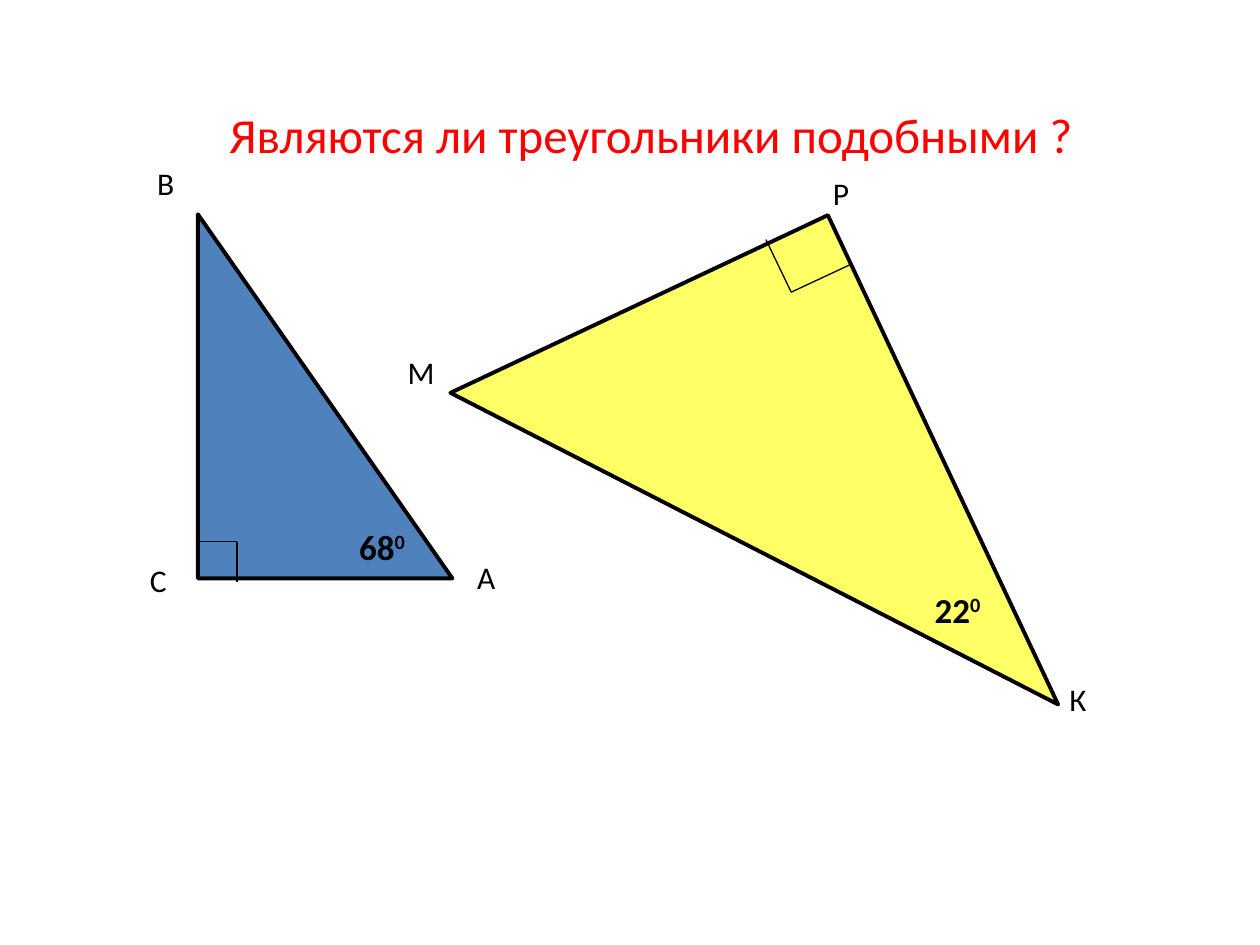
from lxml import etree
from pptx import Presentation
from pptx import util as u
from pptx.dml.color import RGBColor
from pptx.enum import shapes, text
from pptx.oxml.ns import qn


def rgb(value):
    return RGBColor.from_string(value)


class Board:
    """Style and current slide; lengths are in centimetres."""
    FONT = "Calibri"
    INK = "000000"

    def __init__(self, prs):
        self.s = prs.slides.add_slide(prs.slide_layouts[5])

    def place(self, sp, x, y, w, h):
        sp.left, sp.top, sp.width, sp.height = map(u.Cm, (x, y, w, h))

    def set_text(self, sp, words, size, color=INK, bold=False):
        tf = sp.text_frame
        tf.word_wrap = False
        tf.auto_size = text.MSO_AUTO_SIZE.SHAPE_TO_FIT_TEXT
        tf.vertical_anchor = text.MSO_ANCHOR.TOP
        p = tf.paragraphs[0]
        p.alignment = text.PP_ALIGN.LEFT
        p.add_run().text = words
        p.font.name, p.font.size, p.font.bold = self.FONT, u.Pt(size), bold
        p.font.color.rgb = rgb(color)
        return p

    def title(self, words, x, y, w, h):
        sp = self.s.shapes.title
        self.place(sp, x, y, w, h)
        self.set_text(sp, words, 28, "FF0000")

    def label(self, words, x, y, w=0.94, h=1.02, size=18, bold=False):
        sp = self.s.shapes.add_textbox(*map(u.Cm, (x, y, w, h)))
        return self.set_text(sp, words, size, bold=bold)

    def angle(self, degrees, x, y, w):
        p = self.label(degrees, x, y, w, 1.1, 20, True)
        r = p.add_run()
        r.text = "0"
        r._r.get_or_add_rPr().set("baseline", "30000")

    def triangle(self, x, y, w, h, fill, rotation=0):
        sp = self.s.shapes.add_shape(
            shapes.MSO_SHAPE.RIGHT_TRIANGLE, *map(u.Cm, (x, y, w, h)))
        sp.rotation = rotation
        sp.shadow.inherit = False
        sp.fill.solid()
        sp.fill.fore_color.rgb = rgb(fill)
        sp.line.color.rgb = rgb(self.INK)
        sp.line.width = u.Pt(2.25)

    def right_angle(self, *points):
        for start, end in zip(points, points[1:]):
            line = self.s.shapes.add_connector(
                shapes.MSO_CONNECTOR.STRAIGHT, *map(u.Cm, start + end))
            line.line.color.rgb = rgb(self.INK)
            line.line.width = u.Pt(0.75)
            etree.SubElement(line._element.spPr, qn("a:effectLst"))


def main():
    prs = Presentation()
    prs.slide_width, prs.slide_height = u.Cm(25.4), u.Cm(19.05)
    board = Board(prs)

    board.title("Являются ли треугольники подобными ?", 4.37, 1.98, 17.68, 1.45)

    # Triangles with their right-angle marks
    board.triangle(3.99, 4.32, 5.13, 7.34, "4F81BD")
    board.right_angle((3.99, 10.92), (4.78, 10.92), (4.78, 11.73))
    board.triangle(11, 5.61, 8.41, 10.9, "FFFF66", 154.8)
    board.right_angle((17.15, 5.33), (15.95, 5.89), (15.44, 4.83))

    # Known angles
    board.angle("68", 6.99, 10.46, 1.55)
    board.angle("22", 18.59, 11.73, 1.55)

    # Vertices
    for name, x, y in (("С", 2.77, 11.18), ("В", 2.92, 3.18),
                       ("А", 9.37, 11.13), ("М", 7.97, 6.99),
                       ("Р", 16.54, 3.38), ("К", 21.31, 13.59)):
        board.label(name, x, y)

    prs.save("out.pptx")


if __name__ == "__main__":
    main()
